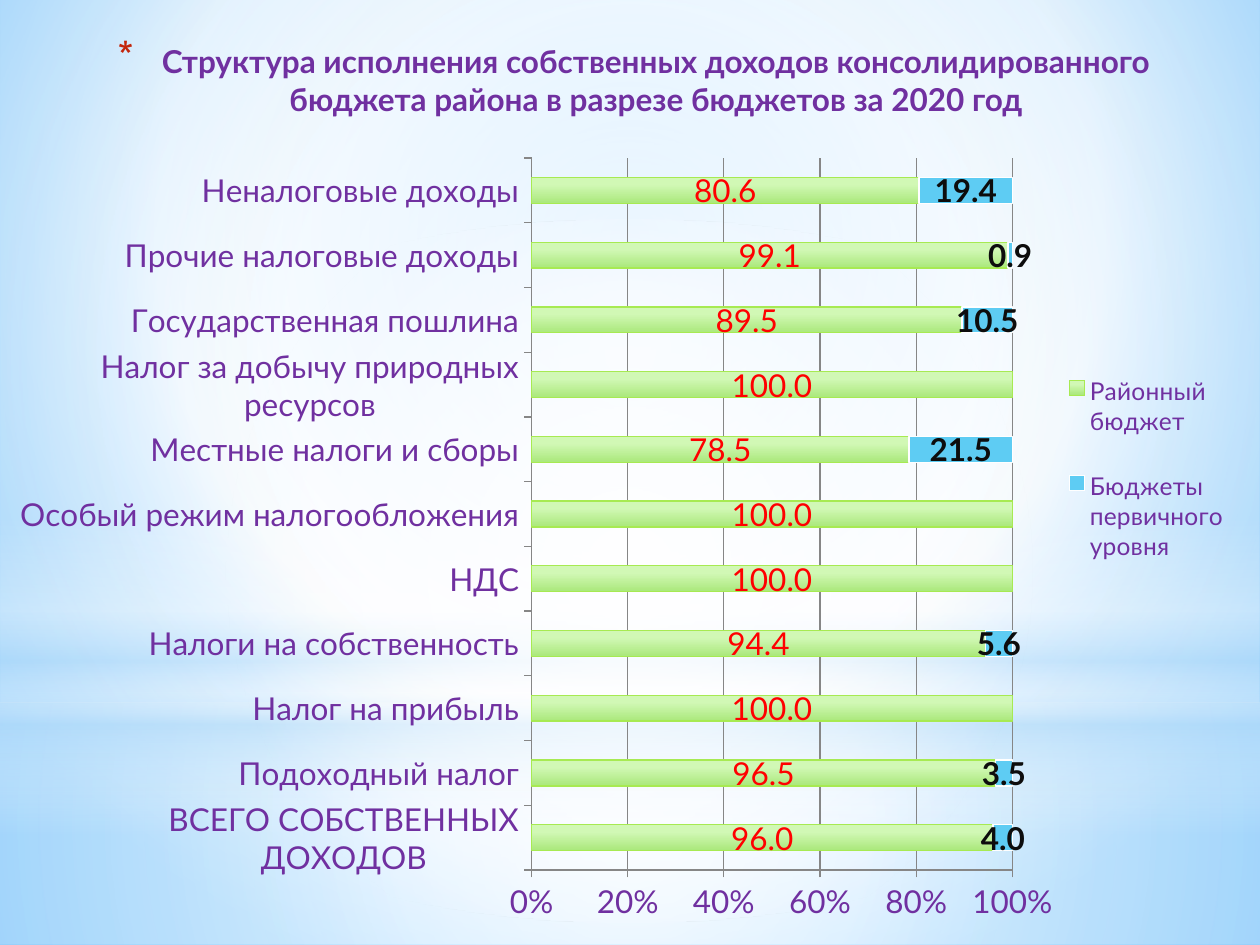
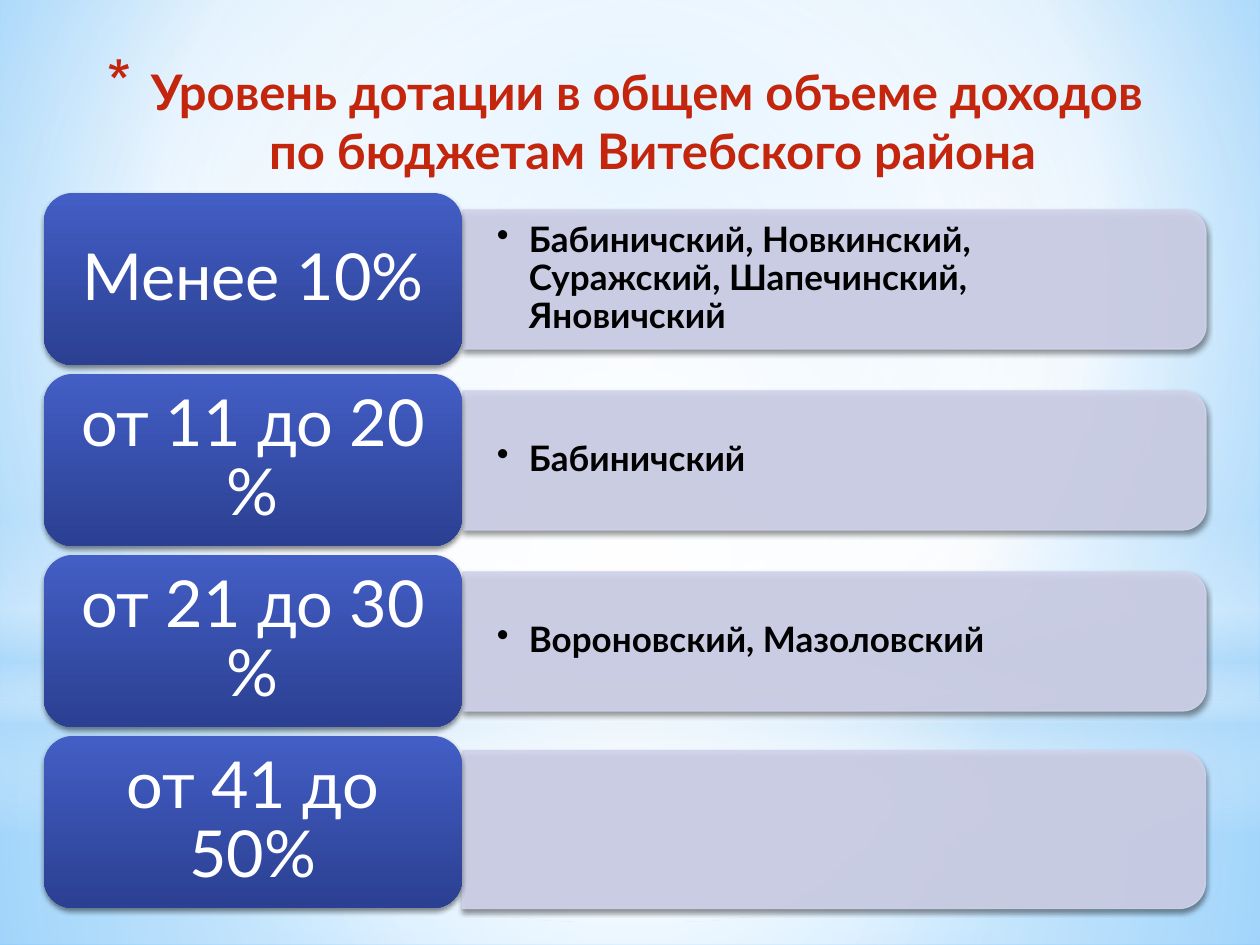
from lxml import etree
from pptx import Presentation
from pptx import util as u
from pptx.chart.data import CategoryChartData
from pptx.dml.color import RGBColor
from pptx.enum import chart as charts, shapes, text
from pptx.oxml import parse_xml
from pptx.oxml.ns import nsdecls, qn

PX = 7257  # EMU in one pixel, 126 pixels to the inch
FONT = "Lato"
COLORS = {
    "purple": "7030A0", "red": "C3260C", "white": "FFFFFF", "black": "000000",
    "haze": "B4DCFA", "sky": "9ED5FF", "deep_sky": "5BB9FF",
    "district_top": "D1F8B5", "district_bottom": "AAE87B", "district_line": "A7EA52",
    "primary": "5ECCF3", "primary_label": "0D0D0D", "district_label": "FF0000",
    "grid": "868686", "panel": "D0D3EB", "range_top": "435EC5", "range_bottom": "2B4092",
}
RGB = {name: RGBColor.from_string(value) for name, value in COLORS.items()}


def set_gradient(fill, stops, center=None):
    """Fill with (position, colour, opacity) stops, downwards or around a center rectangle."""
    stop_xml = "".join(
        f'<a:gs pos="{pos * 1000}"><a:srgbClr val="{COLORS[color]}">'
        f'<a:alpha val="{opacity * 1000}"/></a:srgbClr></a:gs>'
        for pos, color, opacity in stops)
    direction = '<a:lin ang="5400000" scaled="0"/>'
    if center:
        sides = " ".join(f'{side}="{share * 1000}"' for side, share in zip("ltrb", center))
        direction = f'<a:path path="circle"><a:fillToRect {sides}/></a:path>'
    fill.background()
    parent = fill._xPr
    parent.replace(parent.find(qn("a:noFill")), parse_xml(
        f'<a:gradFill {nsdecls("a")} rotWithShape="1"><a:gsLst>{stop_xml}</a:gsLst>'
        f'{direction}</a:gradFill>'))


def place_in_chart(part, index, **shares):
    """Give the plot area or the legend a fixed place, in shares of the chart."""
    for old in part.findall(qn("c:layout")):
        part.remove(old)
    layout = etree.Element(qn("c:layout"))
    manual = etree.SubElement(layout, qn("c:manualLayout"))
    settings = {"xMode": "edge", "yMode": "edge", **shares}
    if part.tag == qn("c:plotArea"):
        settings = {"layoutTarget": "inner", **settings}
    for tag, value in settings.items():
        etree.SubElement(manual, qn(f"c:{tag}")).set("val", str(value))
    part.insert(index, layout)


prs = Presentation()
prs.slide_width, prs.slide_height = 1260 * PX, 945 * PX
master = prs.slide_master
title_only = prs.slide_layouts[5]

# Titles
titles = [
    ("Структура исполнения собственных доходов консолидированного "
     "бюджета района в разрезе бюджетов за 2020 год", 18, "purple", (54, 36, 1160, 119)),
    ("Уровень дотации в общем объеме доходов \vпо бюджетам Витебского района",
     28, "red", (25, 55, 1211, 119)),
]
for wording, size, color, place in titles:
    title = prs.slides.add_slide(title_only).shapes.title
    title.left, title.top, title.width, title.height = [n * PX for n in place]
    frame = title.text_frame
    frame.text = wording
    frame.auto_size = text.MSO_AUTO_SIZE.NONE
    frame.vertical_anchor = text.MSO_ANCHOR.TOP
    paragraph = frame.paragraphs[0]
    paragraph.alignment = text.PP_ALIGN.CENTER
    for run in paragraph.runs:
        for key, value in {"name": FONT, "size": u.Pt(size), "bold": True}.items():
            setattr(run.font, key, value)
        run.font.color.rgb = RGB[color]
    props = paragraph._p.get_or_add_pPr()
    props.set("marL", str(44 * PX))
    props.set("indent", str(-44 * PX))
    bullet_color = etree.SubElement(props, qn("a:buClr"))
    etree.SubElement(bullet_color, qn("a:srgbClr")).set("val", COLORS["red"])
    etree.SubElement(props, qn("a:buSzPct")).set("val", "128000")
    etree.SubElement(props, qn("a:buChar")).set("char", "*")
income, subsidy = prs.slides

# Shared sky background, kept on the master
set_gradient(master.background.fill,
             [(0, "sky", 100), (60, "white", 100), (100, "deep_sky", 100)], (20, 10, 20, 60))
middle = (50, 50, 50, 50)
rect, ellipse = shapes.MSO_SHAPE.RECTANGLE, shapes.MSO_SHAPE.OVAL
sky_layers = [
    (rect, (0, 703, 1260, 242), [(0, "white", 91), (37, "white", 76), (100, "haze", 79)], middle),
    (rect, (0, 0, 1260, 703), [(0, "white", 89), (48, "white", 62), (100, "haze", 79)], middle),
    (rect, (0, 519, 1260, 315),
     [(0, "white", 0), (29, "white", 30), (45, "haze", 40), (55, "white", 26),
      (65, "haze", 60), (100, "white", 0)], None),
    (ellipse, (0, 220, 1260, 703), [(0, "white", 100), (56, "white", 0)], middle),
]
for depth, (kind, place, stops, center) in enumerate(sky_layers):
    layer = income.shapes.add_shape(kind, *[n * PX for n in place])
    set_gradient(layer.fill, stops, center)
    layer.line.fill.background()
    layer.shadow.inherit = False
    master.shapes._spTree.insert(2 + depth, layer._element)

# Slide 1: income shares by budget
shares = [
    ("ВСЕГО СОБСТВЕННЫХ ДОХОДОВ", 96, 4),
    ("Подоходный налог", 96.5, 3.5),
    ("Налог на прибыль", 100, None),
    ("Налоги на собственность", 94.4, 5.6),
    ("НДС", 100, None),
    ("Особый режим налогообложения", 100, None),
    ("Местные налоги и сборы", 78.5, 21.5),
    ("Налог за добычу природных ресурсов", 100, None),
    ("Государственная пошлина", 89.5, 10.5),
    ("Прочие налоговые доходы", 99.1, 0.9),
    ("Неналоговые доходы", 80.6, 19.4),
]
sources, district_shares, primary_shares = zip(*shares)
data = CategoryChartData(number_format="0.0")
data.categories = sources
data.add_series("Районный бюджет", district_shares)
data.add_series("Бюджеты первичного уровня", primary_shares)
chart = income.shapes.add_chart(
    charts.XL_CHART_TYPE.BAR_STACKED_100, 15 * PX, 155 * PX, 1230 * PX, 774 * PX, data).chart
chart.has_title = False
chart.has_legend = True
chart.font.name, chart.font.size = FONT, u.Pt(18)
legend = chart.legend
legend.position = charts.XL_LEGEND_POSITION.RIGHT
legend.include_in_layout = False
place_in_chart(chart._chartSpace.chart.plotArea, 0, x=0.42, y=0.004, w=0.391, h=0.92)
place_in_chart(legend._element, 1, x=0.845, y=0.24, w=0.15, h=0.33)

for part, size in ((chart.category_axis.tick_labels, 18), (chart.value_axis.tick_labels, 18),
                   (legend, 14)):
    part.font.name, part.font.size = FONT, u.Pt(size)
    part.font.color.rgb = RGB["purple"]
for axis in (chart.category_axis, chart.value_axis):
    axis.major_tick_mark = charts.XL_TICK_MARK.OUTSIDE
    axis.format.line.color.rgb = RGB["grid"]
value_axis = chart.value_axis
value_axis.has_major_gridlines = True
value_axis.major_gridlines.format.line.color.rgb = RGB["grid"]
value_axis.minimum_scale, value_axis.maximum_scale, value_axis.major_unit = 0, 1, 0.2
value_axis.tick_labels.number_format = "0%"
value_axis.tick_labels.number_format_is_linked = False

plot = chart.plots[0]
plot.gap_width, plot.overlap, plot.vary_by_categories = 150, 100, False
district, primary = plot.series
set_gradient(district.format.fill, [(28, "district_top", 100), (100, "district_bottom", 100)])
primary.format.fill.solid()
primary.format.fill.fore_color.rgb = RGB["primary"]
for budget, outline, label_color, bold in ((district, "district_line", "district_label", False),
                                           (primary, "white", "primary_label", True)):
    budget.format.line.color.rgb = RGB[outline]
    budget.format.line.width = u.Pt(0.75)
    labels = budget.data_labels
    for key, value in {"show_value": True, "number_format": "0.0",
                       "number_format_is_linked": False,
                       "position": charts.XL_LABEL_POSITION.CENTER}.items():
        setattr(labels, key, value)
    for key, value in {"name": FONT, "size": u.Pt(18), "bold": bold}.items():
        setattr(labels.font, key, value)
    labels.font.color.rgb = RGB[label_color]

# Slide 2: subsidy ranges on the left, councils on the right
ranges = [
    ("Менее 10%", "Бабиничский, Новкинский, Суражский, Шапечинский, Яновичский", 139, 0),
    ("от 11 до 20 %", "Бабиничский", 139, 0),
    ("от 21 до 30 %", "Вороновский, Мазоловский", 139, 0),
    ("от 41 до 50%", "", 158, 7),
]
RANGE_TOP, RANGE_PITCH, RANGE_HEIGHT = 193, 181, 172
PANEL_LEFT, PANEL_LENGTH = 463, 743
for row, (share, councils, thickness, drop) in enumerate(ranges):
    top = RANGE_TOP + row * RANGE_PITCH
    middle_y = top + RANGE_HEIGHT // 2 + drop
    panel = subsidy.shapes.add_shape(
        shapes.MSO_SHAPE.ROUND_2_SAME_RECTANGLE,
        (PANEL_LEFT + (PANEL_LENGTH - thickness) // 2) * PX, (middle_y - PANEL_LENGTH // 2) * PX,
        thickness * PX, PANEL_LENGTH * PX)
    panel.rotation = 90
    panel.line.width = u.Pt(0.75)
    for paint in (panel.fill, panel.line.fill):
        paint.solid()
        paint.fore_color.rgb = RGB["panel"]
    for color in panel._element.spPr.iter(qn("a:srgbClr")):
        etree.SubElement(color, qn("a:alpha")).set("val", "90000")

    label = subsidy.shapes.add_shape(
        shapes.MSO_SHAPE.ROUNDED_RECTANGLE, 44 * PX, top * PX, 418 * PX, RANGE_HEIGHT * PX)
    set_gradient(label.fill, [(0, "range_top", 100), (100, "range_bottom", 100)])
    label.line.fill.background()
    for box in (panel, label):
        box.shadow.inherit = False
        box._element.spPr.find(qn("a:effectLst")).append(parse_xml(
            f'<a:outerShdw {nsdecls("a")} blurRad="{u.Pt(3.1)}" dist="{u.Pt(1.8)}" '
            f'dir="5400000" rotWithShape="0"><a:srgbClr val="{COLORS["black"]}">'
            '<a:alpha val="45000"/></a:srgbClr></a:outerShdw>'))

    writings = [(label, share, 37, "white", False, text.PP_ALIGN.CENTER, 19, 10)]
    if councils:
        council_box = subsidy.shapes.add_textbox(
            PANEL_LEFT * PX, (middle_y - 62) * PX, 720 * PX, 124 * PX)
        writings.append((council_box, councils, 20, "black", True, text.PP_ALIGN.LEFT, 34, 18))
    for box, wording, size, color, bold, alignment, side, edge in writings:
        frame = box.text_frame
        for key, value in {"word_wrap": True, "vertical_anchor": text.MSO_ANCHOR.MIDDLE,
                           "margin_left": side * PX, "margin_right": side * PX,
                           "margin_top": edge * PX, "margin_bottom": edge * PX,
                           "text": wording}.items():
            setattr(frame, key, value)
        paragraph = frame.paragraphs[0]
        paragraph.alignment, paragraph.line_spacing = alignment, 0.9
        font = paragraph.runs[0].font
        font.name, font.size, font.bold = FONT, u.Pt(size), bold
        font.color.rgb = RGB[color]
    if councils:
        props = paragraph._p.get_or_add_pPr()
        props.set("marL", str(32 * PX))
        props.set("indent", str(-32 * PX))
        etree.SubElement(props, qn("a:buChar")).set("char", "•")

prs.save("out.pptx")
